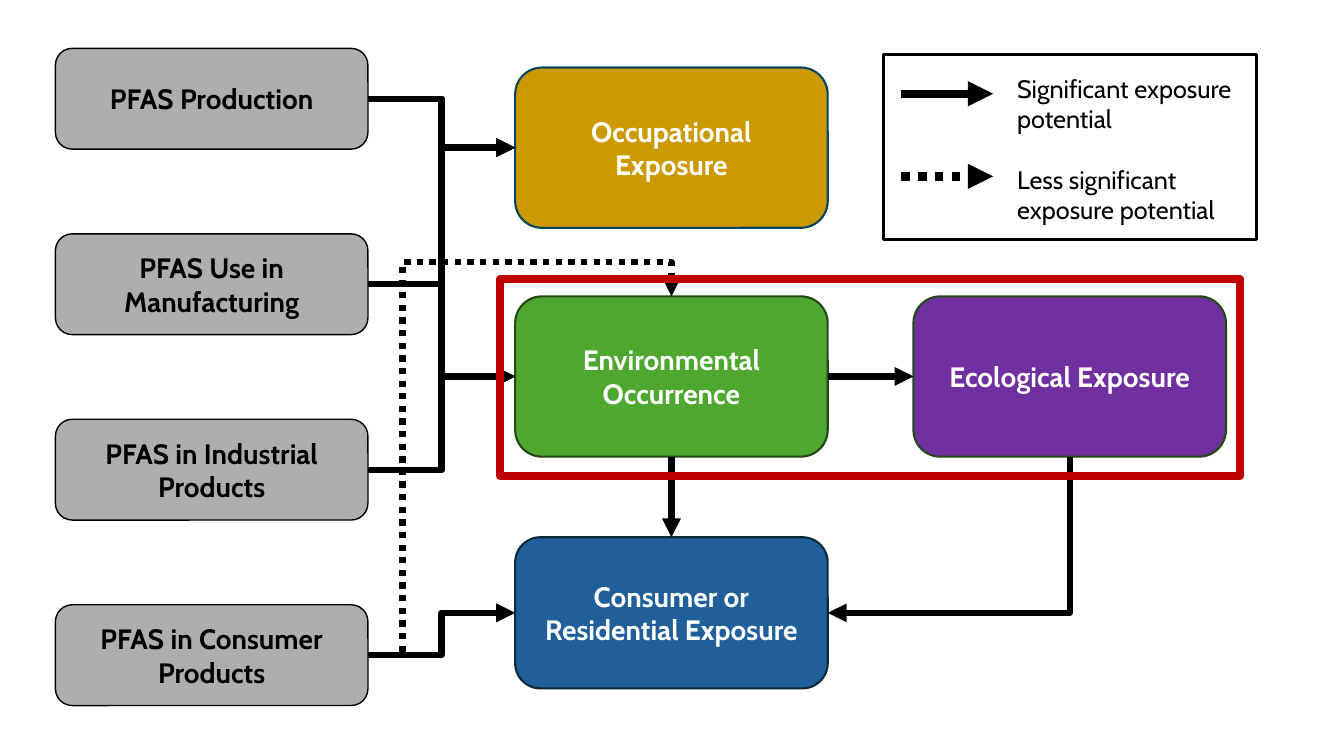
from lxml import etree
from pptx import Presentation
from pptx.dml.color import RGBColor
from pptx.enum.dml import MSO_LINE_DASH_STYLE as Dash
from pptx.enum.shapes import MSO_CONNECTOR as Link, MSO_SHAPE as Shape
from pptx.enum.text import MSO_ANCHOR as Anchor, PP_ALIGN as Align
from pptx.oxml.ns import qn
from pptx.util import Inches, Pt

BLACK = RGBColor(0x00, 0x00, 0x00)
WHITE = RGBColor(0xFF, 0xFF, 0xFF)
GRAY = RGBColor(0xAE, 0xAE, 0xAE)
GOLD = RGBColor(0xCC, 0x99, 0x00)
GREEN = RGBColor(0x4E, 0xA7, 0x2E)
BLUE = RGBColor(0x21, 0x5F, 0x9A)
PURPLE = RGBColor(0x70, 0x30, 0xA0)
RED = RGBColor(0xC0, 0x00, 0x00)
DARK_TEAL = RGBColor(0x07, 0x45, 0x5D)
DARK_GREEN = RGBColor(0x22, 0x49, 0x14)
DARK_BLUE = RGBColor(0x09, 0x2A, 0x39)

SOURCE_COL, EXPOSURE_COL, ECOLOGY_COL = 0.55, 5.11, 9.06
SOURCE_TOP, SOURCE_STEP = 0.48, 1.84
BOX_WIDTH = 3.1
LEGEND_TOP, LEGEND_STEP = 0.93, 0.82
TOP, LEFT, BOTTOM, RIGHT = range(4)

deck = Presentation()
deck.slide_width, deck.slide_height = Inches(13.33), Inches(7.5)
page = deck.slides.add_slide(deck.slide_layouts[6])


def add_box(kind, place, fill, line, weight, words="", ink=BLACK):
    box = page.shapes.add_shape(kind, *map(Inches, place))
    box.shadow.inherit = False
    if fill is None:
        box.fill.background()
    else:
        box.fill.solid()
        box.fill.fore_color.rgb = fill
    box.line.color.rgb = line
    box.line.width = Pt(weight)
    if words:
        box.text_frame.word_wrap = True
        box.text_frame.vertical_anchor = Anchor.MIDDLE
        para = box.text_frame.paragraphs[0]
        para.alignment = Align.CENTER
        span = para.add_run()
        span.text = words
        span.font.color.rgb = ink
        for name, value in {"name": "Cabin", "size": Pt(20), "bold": True}.items():
            setattr(span.font, name, value)
    return box


def add_arrow(kind, weight, ends=(0, 0, 0, 0), start=None, finish=None, dash=None):
    arrow = page.shapes.add_connector(kind, *map(Inches, ends))
    if start:
        arrow.begin_connect(*start)
        arrow.end_connect(*finish)
    arrow.line.color.rgb = BLACK
    arrow.line.width = Pt(weight)
    if dash:
        arrow.line.dash_style = dash
    props = arrow._element.spPr
    etree.SubElement(props.find(qn("a:ln")), qn("a:tailEnd"), type="triangle")
    etree.SubElement(props, qn("a:effectLst"))
    return arrow


sources = [
    add_box(Shape.ROUNDED_RECTANGLE,
            (SOURCE_COL, SOURCE_TOP + row * SOURCE_STEP, BOX_WIDTH, 1), GRAY, BLACK, 1, words)
    for row, words in enumerate([
        "PFAS Production",
        "PFAS Use in Manufacturing",
        "PFAS in Industrial Products",
        "PFAS in Consumer Products",
    ])
]

occupational, environmental, consumer, ecological = [
    add_box(Shape.ROUNDED_RECTANGLE, (left, top, BOX_WIDTH, height), fill, line, 1.5, words, WHITE)
    for left, top, height, fill, line, words in [
        (EXPOSURE_COL, 0.67, 1.59, GOLD, DARK_TEAL, "Occupational Exposure"),
        (EXPOSURE_COL, 2.94, 1.59, GREEN, DARK_GREEN, "Environmental Occurrence"),
        (EXPOSURE_COL, 5.33, 1.5, BLUE, DARK_BLUE, "Consumer or Residential Exposure"),
        (ECOLOGY_COL, 2.94, 1.59, PURPLE, DARK_GREEN, "Ecological Exposure"),
    ]
]

for row, (words, text_top, dash) in enumerate([
    ("Significant exposure potential", 0.68, None),
    ("Less significant exposure potential", 1.58, Dash.ROUND_DOT),
]):
    y = LEGEND_TOP + row * LEGEND_STEP
    add_arrow(Link.STRAIGHT, 6, (8.94, y, 9.85, y), dash=dash)
    label = page.shapes.add_textbox(*map(Inches, (9.99, text_top, 2.4, 0.71)))
    label.text_frame.word_wrap = True
    span = label.text_frame.paragraphs[0].add_run()
    span.text = words
    span.font.color.rgb = BLACK
    for name, value in {"name": "Cabin", "size": Pt(18)}.items():
        setattr(span.font, name, value)
add_box(Shape.RECTANGLE, (8.76, 0.54, 3.7, 1.84), None, BLACK, 2.25)

for source in sources[:3]:
    for target in (occupational, environmental):
        add_arrow(Link.ELBOW, 4.5, start=(source, RIGHT), finish=(target, LEFT))
add_arrow(Link.ELBOW, 4.5, start=(sources[3], RIGHT), finish=(consumer, LEFT))
add_arrow(Link.STRAIGHT, 4.5, start=(environmental, RIGHT), finish=(ecological, LEFT))
add_arrow(Link.STRAIGHT, 4.5, start=(environmental, BOTTOM), finish=(consumer, TOP))

corner = add_arrow(Link.ELBOW, 4.5, start=(ecological, BOTTOM), finish=(consumer, RIGHT))
across, down = corner.width, corner.height
corner.left += (across - down) // 2
corner.top += (down - across) // 2
corner.width, corner.height = down, across
frame = corner._element.spPr.find(qn("a:xfrm"))
frame.attrib.pop("flipH", None)
frame.set("rot", "5400000")
corner._element.spPr.find(qn("a:prstGeom")).set("prst", "bentConnector2")

detour = add_arrow(Link.ELBOW, 4.5, start=(sources[3], RIGHT), finish=(environmental, TOP),
                   dash=Dash.ROUND_DOT)
shape = detour._element.spPr.find(qn("a:prstGeom"))
shape.set("prst", "bentConnector4")
guides = shape.find(qn("a:avLst"))
for name, share in {"adj1": 11400, "adj2": 109500}.items():
    etree.SubElement(guides, qn("a:gd"), name=name, fmla=f"val {share}")

add_box(Shape.RECTANGLE, (4.96, 2.77, 7.34, 1.95), None, RED, 6)

deck.save("out.pptx")
